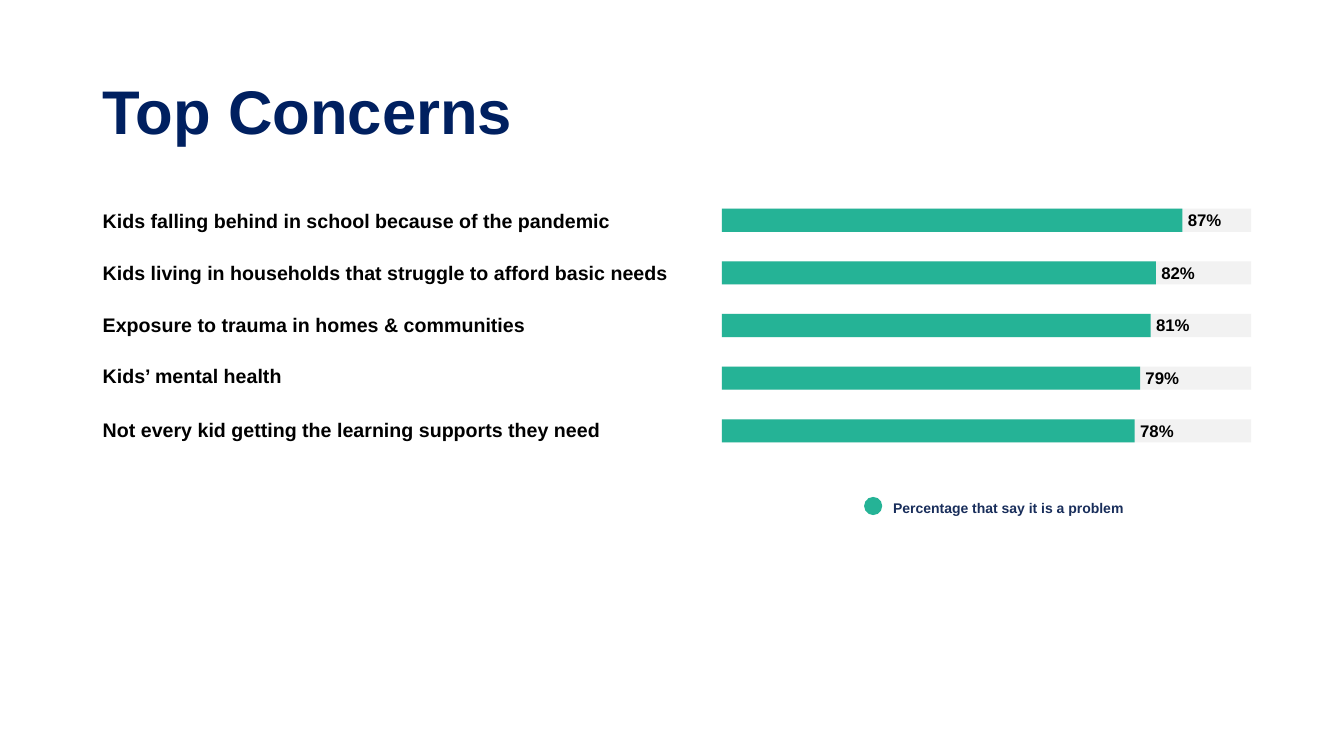
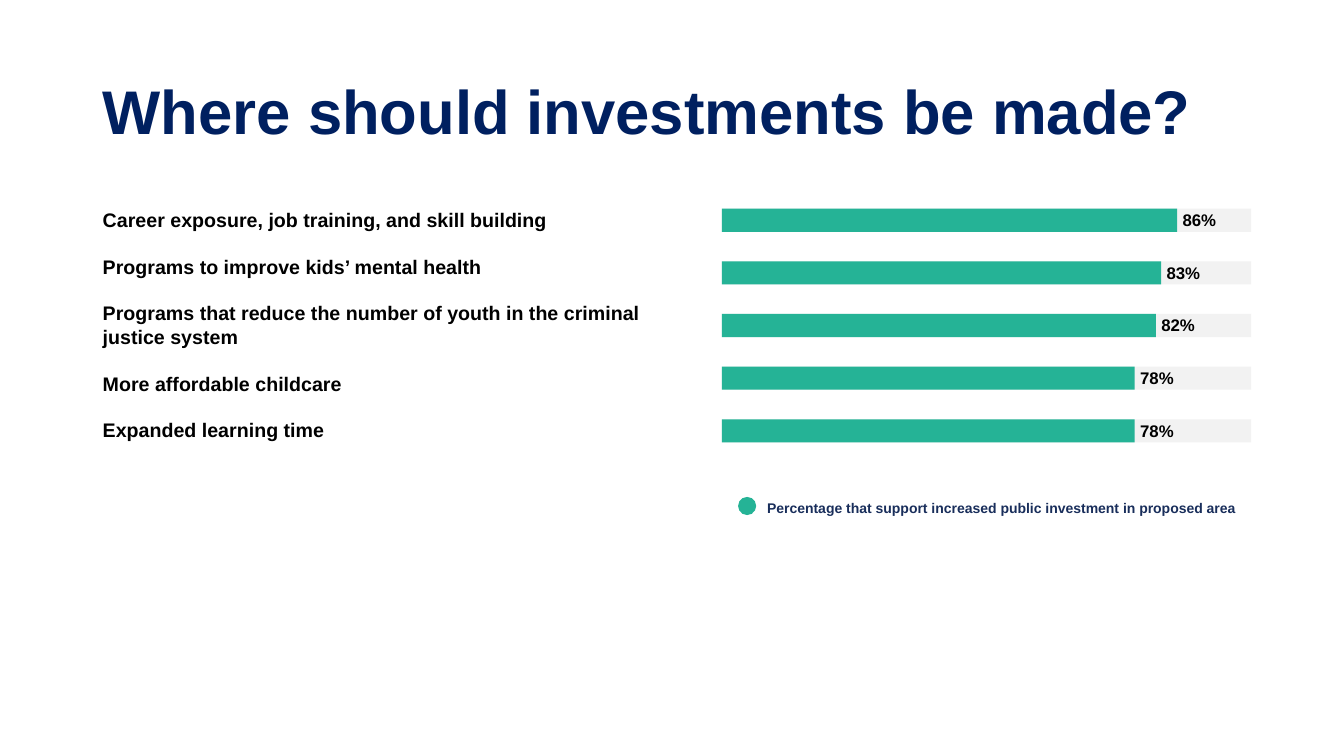
from pptx import Presentation
from pptx.dml.color import RGBColor
from pptx.enum.shapes import MSO_SHAPE as Shape
from pptx.enum.text import MSO_ANCHOR as Anchor, MSO_AUTO_SIZE as Fit, PP_ALIGN as Align
from pptx.util import Inches, Pt

NAVY, INK, BLACK = "002060", "192E5B", "000000"
TEAL, GRAY = "25B396", "F2F2F2"
FONT = "Arial"
LEFT, TOP, FULL, THICK = 7.16, 2.07, 5.25, 0.23
STEP = (4.16 - TOP) / 4

SLIDES = [
    ("Top Concerns",
     [("Kids falling behind in school because of the pandemic", 2.02, 87),
      ("Kids living in households that struggle to afford basic needs", 2.54, 82),
      ("Exposure to trauma in homes & communities", 3.06, 81),
      ("Kids’ mental health", 3.56, 79),
      ("Not every kid getting the learning supports they need", 4.1, 78)],
     ("Percentage that say it is a problem", 8.57, 2.6)),
    ("Where should investments be made?",
     [("Career exposure, job training, and skill building", 2.01, 86),
      ("Programs to improve kids’ mental health", 2.48, 83),
      ("Programs that reduce the number of youth in the criminal justice system", 2.94, 82),
      ("More affordable childcare", 3.64, 78),
      ("Expanded learning time", 4.1, 78)],
     ("Percentage that support increased public investment in proposed area", 7.32, 5)),
]


def write(box, text, size, color, align=Align.LEFT, anchor=Anchor.TOP, spacing=1.0):
    frame = box.text_frame
    frame.word_wrap = True
    frame.auto_size = Fit.NONE
    frame.vertical_anchor = anchor
    frame.text = text
    para = frame.paragraphs[0]
    para.alignment = align
    para.line_spacing = spacing
    para.font.name = FONT
    para.font.size = Pt(size)
    para.font.bold = True
    para.font.color.rgb = RGBColor.from_string(color)


def draw(slide, kind, x, y, w, h, color):
    shape = slide.shapes.add_shape(kind, Inches(x), Inches(y), Inches(w), Inches(h))
    shape.shadow.inherit = False
    shape.fill.solid()
    shape.fill.fore_color.rgb = RGBColor.from_string(color)
    shape.line.fill.background()


deck = Presentation()
deck.slide_width, deck.slide_height = Inches(13.33), Inches(7.5)

for head, rows, (note, x, width) in SLIDES:
    slide = deck.slides.add_slide(deck.slide_layouts[5])
    title = slide.shapes.title
    title.left, title.top = Inches(0.92), Inches(0.76)
    title.width, title.height = Inches(11.59), Inches(0.96)
    write(title, head, 44, NAVY, spacing=0.9)

    for i, (text, y, value) in enumerate(rows):
        label = slide.shapes.add_textbox(
            Inches(0.92), Inches(y), Inches(5.85), Inches(0.57 if len(text) > 65 else 0.34))
        write(label, text, 14, BLACK)

        top = TOP + i * STEP
        length = FULL * value / 100
        draw(slide, Shape.RECTANGLE, LEFT, top, FULL, THICK, GRAY)
        draw(slide, Shape.RECTANGLE, LEFT, top, length, THICK, TEAL)
        share = slide.shapes.add_textbox(
            Inches(LEFT + length - 0.05), Inches(top - 0.04), Inches(0.54), Inches(0.3))
        write(share, f"{value}%", 12, BLACK, Align.CENTER, Anchor.MIDDLE)

    draw(slide, Shape.OVAL, x, 4.93, 0.18, 0.18, TEAL)
    legend = slide.shapes.add_textbox(
        Inches(x + 0.19), Inches(4.89), Inches(width), Inches(0.27))
    write(legend, note, 10, INK, spacing=1.07)

deck.save("out.pptx")
